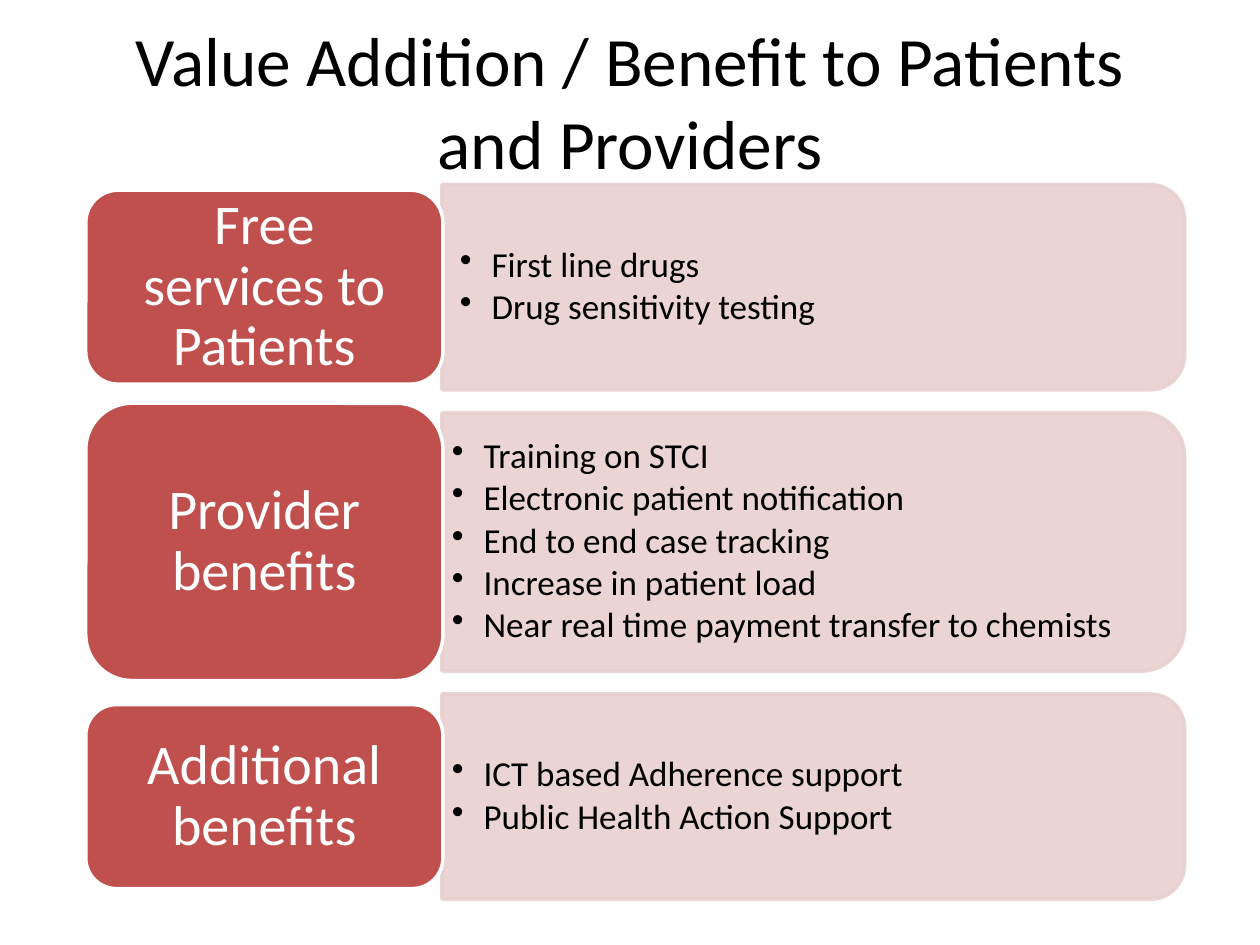
from lxml.etree import SubElement
from pptx import Presentation
from pptx.dml.color import RGBColor
from pptx.enum.shapes import MSO_SHAPE
from pptx.enum.text import MSO_ANCHOR, MSO_AUTO_SIZE, PP_ALIGN
from pptx.oxml.ns import qn
from pptx.util import Cm, Pt

COLORS = {"card": "C0504D", "panel": "E8D0D0", "white": "FFFFFF", "black": "000000"}


def write(shape, lines, size, color, align=PP_ALIGN.CENTER, inset=0.5,
          spacing=0.9, after=0, bullet=False):
    frame = shape.text_frame
    frame.word_wrap = True
    frame.auto_size = MSO_AUTO_SIZE.NONE
    frame.vertical_anchor = MSO_ANCHOR.MIDDLE
    frame.margin_left = frame.margin_right = Cm(inset)
    frame.margin_top = frame.margin_bottom = Cm(0.13)
    frame.text = "\n".join(lines)
    for para in frame.paragraphs:
        para.alignment = align
        para.line_spacing = spacing
        para.space_after = Pt(after)
        para.font.size = Pt(size)
        para.font.name = "Calibri"
        para.font.color.rgb = RGBColor.from_string(COLORS[color])
        if bullet:
            props = para._p.get_or_add_pPr()
            props.set("marL", str(Cm(0.64)))
            props.set("indent", str(-Cm(0.64)))
            mark = SubElement(props, qn("a:buChar"), char="•")
            props.remove(mark)
            props.insert_element_before(mark, "a:tabLst", "a:defRPr", "a:extLst")


def draw(kind, left, top, width, height, fill, line, alpha=100):
    shape = slide.shapes.add_shape(kind, Cm(left), Cm(top), Cm(width), Cm(height))
    shape.shadow.inherit = False
    shape.fill.solid()
    shape.fill.fore_color.rgb = RGBColor.from_string(COLORS[fill])
    shape.line.color.rgb = RGBColor.from_string(COLORS[line])
    shape.line.width = Pt(2)
    if alpha < 100:
        for color in shape._element.spPr.iter(qn("a:srgbClr")):
            SubElement(color, qn("a:alpha"), val=str(alpha * 1000))
    return shape


deck = Presentation()
deck.slide_width, deck.slide_height = Cm(25.4), Cm(19.05)
slide = deck.slides.add_slide(deck.slide_layouts[5])

title = slide.shapes.title
title.left, title.top, title.width, title.height = Cm(1.27), Cm(0.43), Cm(22.86), Cm(3.18)
write(title, ["Value Addition / Benefit to Patients and Providers"], 39.6, "black",
      inset=0.25, spacing=1)

# Heading, points, panel height, card height, text inset
rows = [
    ("Free services to Patients",
     ["First line drugs", "Drug sensitivity testing"], 4.14, 3.91, 0.36),
    ("Provider benefits",
     ["Training on STCI", "Electronic patient notification", "End to end case tracking",
      "Increase in patient load", "Near real time payment transfer to chemists"],
     5.21, 5.59, 0.2),
    ("Additional benefits",
     ["ICT based Adherence support", "Public Health Action Support"], 4.14, 3.71, 0.2),
]
card_left, card_width = 1.73, 7.2
panel_left, panel_width = 8.91, 14.97
top, gap = 3.72, 0.46

for heading, points, tall, card_tall, inset in rows:
    middle = top + tall / 2
    # A quarter turn swaps width and height about the centre
    panel = draw(MSO_SHAPE.ROUND_2_SAME_RECTANGLE,
                 panel_left + (panel_width - tall) / 2, middle - panel_width / 2,
                 tall, panel_width, "panel", "panel", alpha=90)
    panel.rotation = 90
    box = slide.shapes.add_textbox(Cm(panel_left), Cm(top), Cm(panel_width), Cm(tall))
    write(box, points, 20, "black", align=PP_ALIGN.LEFT, inset=inset, after=2.6, bullet=True)
    card = draw(MSO_SHAPE.ROUNDED_RECTANGLE, card_left, middle - card_tall / 2,
                card_width, card_tall, "card", "white")
    write(card, [heading], 32, "white")
    top += tall + gap

deck.save("out.pptx")
